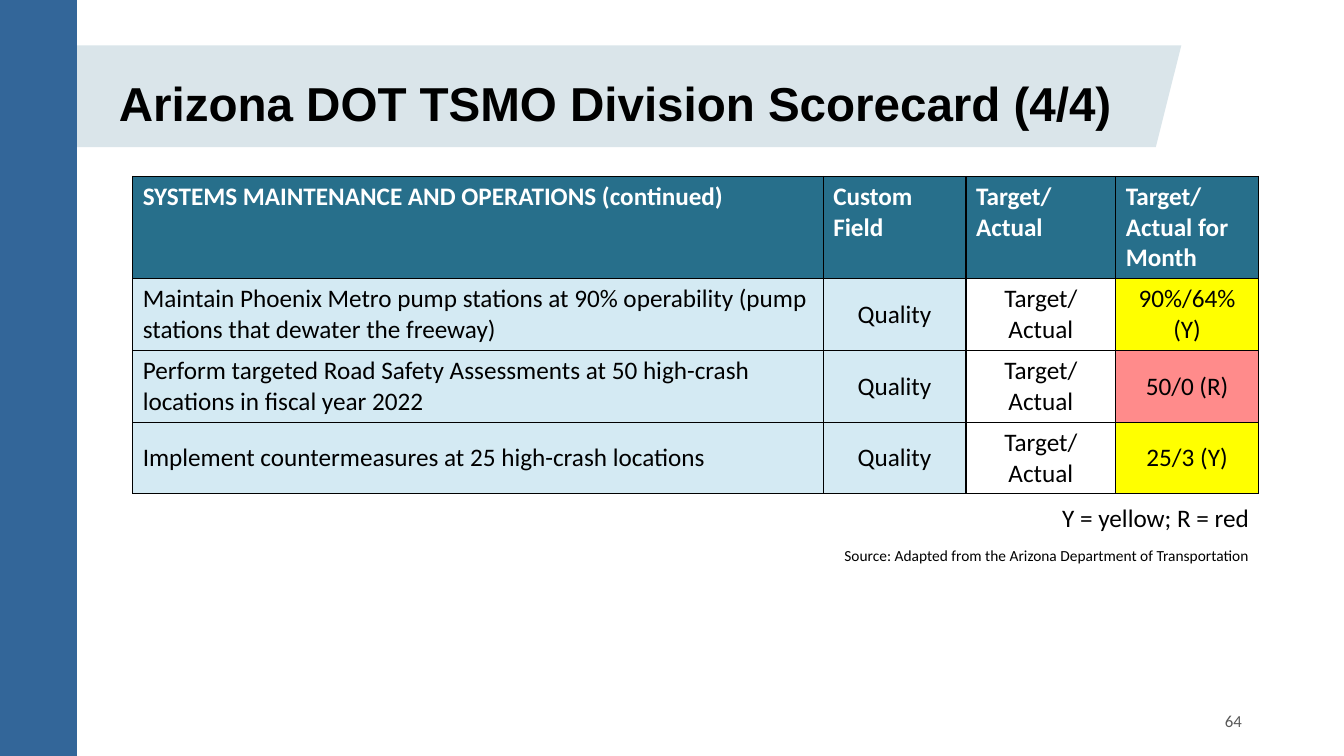
import pptx
import pptx.dml.color
import pptx.enum.shapes
import pptx.enum.text
import pptx.oxml
import pptx.oxml.ns
import pptx.util
from dataclasses import dataclass

Pt = pptx.util.Pt
Align = pptx.enum.text.PP_ALIGN
Anchor = pptx.enum.text.MSO_ANCHOR
Shape = pptx.enum.shapes.MSO_SHAPE


@dataclass(frozen=True)
class Theme:
    heading_font: str = "Arial"
    body_font: str = "Calibri"
    title_size: float = 34
    body_size: float = 18
    source_size: float = 11
    number_size: float = 12
    black: str = "000000"
    white: str = "FFFFFF"
    gray: str = "595959"
    side_bar: str = "336699"
    title_band: str = "DAE5EA"
    header: str = "276F8B"
    pale_blue: str = "D4EAF3"
    yellow: str = "FFFF00"
    red: str = "FF8B8B"


class SlideBuilder:
    def __init__(self, slide, theme):
        self.slide = slide
        self.theme = theme

    def set_text(self, frame, text, size, color, font=None, bold=False, **paragraph_format):
        paragraph = frame.paragraphs[0]
        paragraph.text = text
        for name, value in paragraph_format.items():
            setattr(paragraph, name, value)
        font_format = {"name": font or self.theme.body_font, "size": Pt(size), "bold": bold}
        for name, value in font_format.items():
            setattr(paragraph.runs[0].font, name, value)
        paragraph.runs[0].font.color.rgb = pptx.dml.color.RGBColor.from_string(color)

    def fill(self, target, color):
        target.fill.solid()
        target.fill.fore_color.rgb = pptx.dml.color.RGBColor.from_string(color)

    def block(self, kind, box, color):
        shape = self.slide.shapes.add_shape(kind, *map(Pt, box))
        shape.shadow.inherit = False
        self.fill(shape, color)
        shape.line.fill.background()
        return shape

    def text(self, box, text, size, color, anchor=Anchor.TOP, **text_format):
        frame = self.slide.shapes.add_textbox(*map(Pt, box)).text_frame
        frame.word_wrap = True
        frame.vertical_anchor = anchor
        self.set_text(frame, text, size, color, **text_format)

    def border(self, cell):
        """Draw a one-point line on all four sides; call before filling the cell."""
        properties = cell._tc.get_or_add_tcPr()
        for side in ("lnL", "lnR", "lnT", "lnB"):
            properties.append(pptx.oxml.parse_xml(
                f'<a:{side} {pptx.oxml.ns.nsdecls("a")} w="{Pt(1)}"><a:solidFill>'
                f'<a:srgbClr val="{self.theme.black}"/></a:solidFill></a:{side}>'))

    def scorecard(self, left, top, widths, heights, header, rows):
        """Each row is (measure, field, target, result, result color)."""
        theme = self.theme
        table = self.slide.shapes.add_table(
            len(heights), len(widths), Pt(left), Pt(top),
            Pt(sum(widths)), Pt(sum(heights))).table
        table.first_row = table.horz_banding = False
        for column, width in zip(table.columns, widths):
            column.width = Pt(width)
        for row, height in zip(table.rows, heights):
            row.height = Pt(height)
        for index, label in enumerate(header):
            cell = table.cell(0, index)
            self.border(cell)
            self.fill(cell, theme.header)
            self.set_text(cell.text_frame, label, theme.body_size, theme.white, bold=True)
        for row_index, (*labels, result_color) in enumerate(rows, 1):
            colors = (theme.pale_blue, theme.pale_blue, theme.white, result_color)
            for index, (label, color) in enumerate(zip(labels, colors)):
                cell = table.cell(row_index, index)
                self.border(cell)
                self.fill(cell, color)
                cell.vertical_anchor = Anchor.MIDDLE
                self.set_text(cell.text_frame, label, theme.body_size, theme.black,
                              alignment=Align.CENTER if index else Align.LEFT)


def main():
    presentation = pptx.Presentation()
    presentation.slide_width = Pt(960)
    presentation.slide_height = Pt(540)
    theme = Theme()
    builder = SlideBuilder(
        presentation.slides.add_slide(presentation.slide_layouts[6]), theme)

    band = builder.block(Shape.PARALLELOGRAM, (17.3, 32.4, 826.5, 72.7), theme.title_band)
    band.adjustments[0] = 0.25
    builder.block(Shape.RECTANGLE, (0, 0, 55, 540), theme.side_bar)
    builder.text((77.8, 54, 738, 69), "Arizona DOT TSMO Division Scorecard (4/4)",
                 theme.title_size, theme.black, font=theme.heading_font, bold=True,
                 line_spacing=0.9)

    header = ("SYSTEMS MAINTENANCE AND OPERATIONS (continued)", "Custom Field",
              "Target/ Actual", "Target/ Actual for Month")
    rows = [
        ("Maintain Phoenix Metro pump stations at 90% operability "
         "(pump stations that dewater the freeway)",
         "Quality", "Target/ Actual", "90%/64% (Y)", theme.yellow),
        ("Perform targeted Road Safety Assessments at 50 high-crash "
         "locations in fiscal year 2022",
         "Quality", "Target/ Actual", "50/0 (R)", theme.red),
        ("Implement countermeasures at 25 high-crash locations",
         "Quality", "Target/ Actual", "25/3 (Y)", theme.yellow),
    ]
    builder.scorecard(94.8, 126, (493.2, 102, 107, 102), (73.2, 51.2, 51.2, 51.2),
                      header, rows)

    builder.text((743.8, 355, 155.5, 29), "Y = yellow; R = red",
                 theme.body_size, theme.black, alignment=Align.RIGHT)
    builder.text((593.3, 386.6, 306, 21),
                 "Source: Adapted from the Arizona Department of Transportation",
                 theme.source_size, theme.black, alignment=Align.RIGHT)
    builder.text((678.2, 500.5, 216, 28.8), "64", theme.number_size, theme.gray,
                 anchor=Anchor.MIDDLE, alignment=Align.RIGHT)
    presentation.save("out.pptx")


if __name__ == "__main__":
    main()
